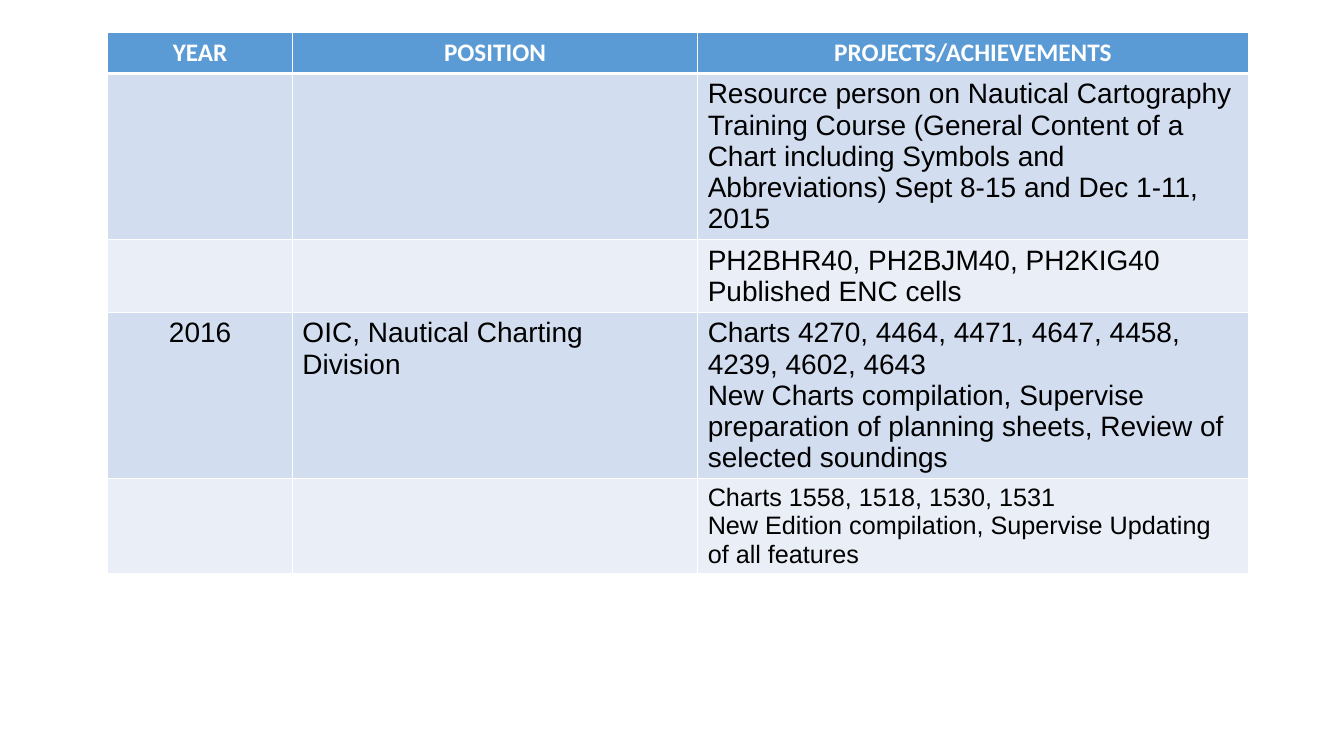
"""Build a slide with a table of yearly positions and achievements."""
from lxml.etree import SubElement
from pptx import Presentation
from pptx.dml.color import RGBColor as Rgb
from pptx.enum.text import PP_ALIGN as Align
from pptx.oxml.ns import qn
from pptx.util import Inches, Pt

HEAD = ("YEAR", "POSITION", "PROJECTS/ACHIEVEMENTS")
BODY = [
    ("", "", "Resource person on Nautical Cartography Training Course "
     "(General Content of a Chart including Symbols and Abbreviations) "
     "Sept 8-15 and Dec 1-11, 2015"),
    ("", "", "PH2BHR40, PH2BJM40, PH2KIG40\nPublished ENC cells"),
    ("2016", "OIC, Nautical Charting Division",
     "Charts 4270, 4464, 4471, 4647, 4458, 4239, 4602, 4643\n"
     "New Charts compilation, Supervise preparation of planning sheets, "
     "Review of selected soundings"),
    ("", "", "Charts 1558, 1518, 1530, 1531\n"
     "New Edition compilation, Supervise Updating of all features"),
]
COLS = (1.83, 4.02, 5.46)
ROWS = (0.41, 1.64, 0.72, 1.64, 0.94)
SIZES = (18, 20, 20, 20, 18)
LEFT, TOP = 1.07, 0.32
HEX = {"head": "5B9BD5", "odd": "D2DEEF", "even": "EAEFF7",
       "line": "FFFFFF", "text": "000000"}


def edge(cell, row):
    """Draw the four cell borders, thicker under the header."""
    props = cell._tc.get_or_add_tcPr()
    thick = {("B", 0), ("T", 1)}
    for side in "LRTB":
        width = Pt(3 if (side, row) in thick else 1)
        line = SubElement(props, qn(f"a:ln{side}"), w=str(width))
        fill = SubElement(line, qn("a:solidFill"))
        SubElement(fill, qn("a:srgbClr"), val=HEX["line"])


def write(cell, text, row, col):
    """Set and format the text of one cell."""
    cell.text_frame.text = text
    for para in cell.text_frame.paragraphs:
        para.alignment = Align.CENTER if row == 0 or col == 0 else Align.LEFT
        para.font.size = Pt(SIZES[row])
        for run in para.runs:
            font = run.font
            font.size = Pt(SIZES[row])
            font.bold = row == 0
            font.name = "Arial" if row else "Calibri"
            font.color.rgb = Rgb.from_string(HEX["text" if row else "line"])


def main():
    """Lay out the table and save the deck."""
    deck = Presentation()
    deck.slide_width, deck.slide_height = Inches(13.33), Inches(7.5)
    slide = deck.slides.add_slide(deck.slide_layouts[6])
    table = slide.shapes.add_table(
        len(ROWS), len(COLS), Inches(LEFT), Inches(TOP),
        Inches(sum(COLS)), Inches(sum(ROWS))).table
    for col, width in zip(table.columns, COLS):
        col.width = Inches(width)
    for row, height in zip(table.rows, ROWS):
        row.height = Inches(height)
    for r, texts in enumerate([HEAD, *BODY]):
        tone = "head" if r == 0 else "odd" if r % 2 else "even"
        for c, text in enumerate(texts):
            cell = table.cell(r, c)
            edge(cell, r)
            cell.fill.solid()
            cell.fill.fore_color.rgb = Rgb.from_string(HEX[tone])
            write(cell, text, r, c)
    deck.save("out.pptx")


if __name__ == "__main__":
    main()
